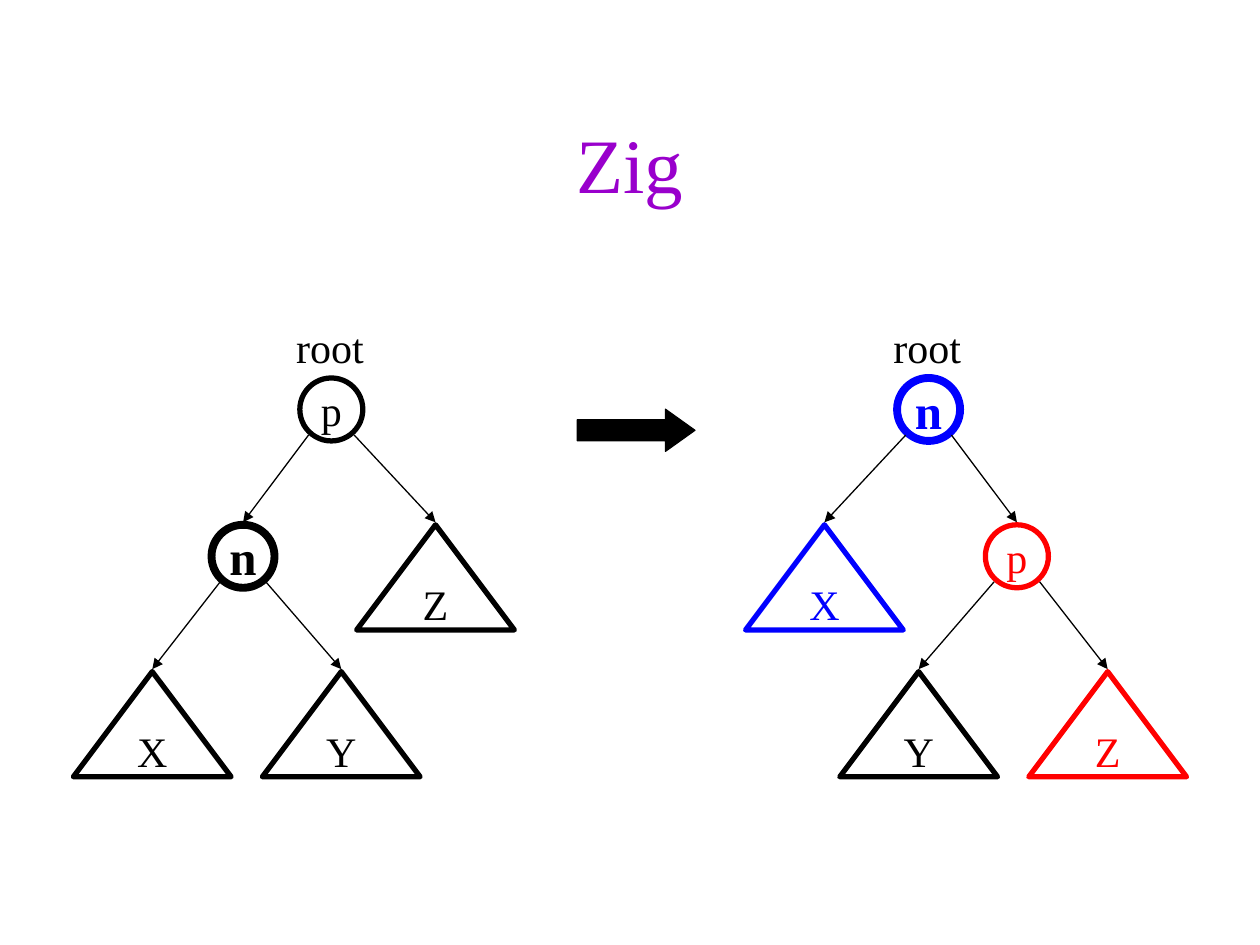
import pptx
import pptx.dml.color
import pptx.enum.shapes
import pptx.enum.text
import pptx.oxml.ns
import pptx.util
from lxml import etree
from pptx.util import Cm, Pt

FONT = "Times New Roman"
COLOURS = {"ink": "000000", "title": "9900CC", "promoted": "0000FF", "demoted": "FF0000"}
SHAPES = pptx.enum.shapes.MSO_SHAPE
CENTRE = pptx.enum.text.PP_ALIGN.CENTER
MIDDLE = pptx.enum.text.MSO_ANCHOR.MIDDLE

SLIDE_WIDTH, SLIDE_HEIGHT = 25.4, 19.05
TREE_WIDTH, TREE_LEFT, TREE_TOP = 8.89, 1.48, 6.35
LEVEL_TOP, LEVEL_STEP = 1.27, 2.96
NODE_SIZE = 1.27
SUBTREE_WIDTH, SUBTREE_HEIGHT = 3.18, 2.12
ROOT_X, CHILD_X, SIBLING_X, OUTER_X, INNER_X = 5.2, 3.42, 7.3, 1.59, 5.4


def rgb(colour):
    """Return the named colour."""
    return pptx.dml.color.RGBColor.from_string(COLOURS[colour])


def write(frame, text, size, colour, bold=False, align=CENTRE):
    """Put one styled paragraph in a text frame."""
    frame.text = text
    paragraph = frame.paragraphs[0]
    paragraph.alignment = align
    paragraph.font.name = FONT
    paragraph.font.size = Pt(size)
    paragraph.font.bold = bold
    paragraph.font.color.rgb = rgb(colour)


def add_outline(slide, kind, box, text, colour, focus=False):
    """Draw an unfilled, labelled shape; the focus node is heavier."""
    shape = slide.shapes.add_shape(kind, *map(Cm, box))
    shape.shadow.inherit = False
    shape.fill.background()
    shape.line.color.rgb = rgb(colour)
    shape.line.width = Pt(4.5 if focus else 3)
    shape.text_frame.word_wrap = False
    shape.text_frame.vertical_anchor = MIDDLE
    write(shape.text_frame, text, 28 if focus else 24, colour, focus)


def add_branch(slide, start, end):
    """Draw a thin arrow from a parent to a child."""
    branch = slide.shapes.add_connector(
        pptx.enum.shapes.MSO_CONNECTOR.STRAIGHT, *map(Cm, (*start, *end)))
    branch.line.color.rgb = rgb("ink")
    branch.line.width = Pt(0.75)
    qn = pptx.oxml.ns.qn
    etree.SubElement(branch.line._get_or_add_ln(), qn("a:tailEnd"), type="triangle")
    etree.SubElement(branch._element.spPr, qn("a:effectLst"))


def add_tree(slide, left, top, mirrored, nodes, subtrees):
    """Draw a tree in its box from (text, colour) pairs, mirrored if asked."""
    def across(x):
        return left + (TREE_WIDTH - x if mirrored else x)

    def down(level):
        return top + LEVEL_TOP + level * LEVEL_STEP

    for (text, colour), x, level in zip(nodes, (ROOT_X, CHILD_X), (0, 1)):
        box = across(x) - NODE_SIZE / 2, down(level), NODE_SIZE, NODE_SIZE
        add_outline(slide, SHAPES.OVAL, box, text, colour, text == "n")

    for (text, colour), x, level in zip(subtrees, (OUTER_X, INNER_X, SIBLING_X), (2, 2, 1)):
        box = across(x) - SUBTREE_WIDTH / 2, down(level), SUBTREE_WIDTH, SUBTREE_HEIGHT
        add_outline(slide, SHAPES.ISOSCELES_TRIANGLE, box, text, colour)

    families = ((ROOT_X, (CHILD_X, SIBLING_X)), (CHILD_X, (OUTER_X, INNER_X)))
    for level, (parent, children) in enumerate(families):
        for side, child in zip((-0.46, 0.46), children):
            add_branch(slide, (across(parent + side), down(level) + 1.15),
                       (across(child), down(level + 1) - 0.05))

    label = slide.shapes.add_textbox(
        Cm(across(ROOT_X) - 0.96), Cm(top), Cm(1.88), Cm(1.27))
    label.text_frame.word_wrap = False
    write(label.text_frame, "root", 24, "ink", align=pptx.enum.text.PP_ALIGN.LEFT)


def add_title(slide, left, top, width, height):
    """Place and format the slide title."""
    title = slide.shapes.title
    title.left, title.top, title.width, title.height = map(Cm, (left, top, width, height))
    title.text_frame.auto_size = pptx.enum.text.MSO_AUTO_SIZE.NONE
    title.text_frame.vertical_anchor = MIDDLE
    write(title.text_frame, "Zig", 44, "title")


def add_rotation_arrow(slide, left, top, width, height):
    """Draw the solid arrow between the two trees."""
    arrow = slide.shapes.add_shape(
        SHAPES.RIGHT_ARROW, *map(Cm, (left, top, width, height)))
    arrow.shadow.inherit = False
    arrow.adjustments[1] = 0.7
    arrow.fill.solid()
    arrow.fill.fore_color.rgb = rgb("ink")
    arrow.line.color.rgb = rgb("ink")
    arrow.line.width = Pt(0.75)


def main():
    """Build and save the slide."""
    deck = pptx.Presentation()
    deck.slide_width, deck.slide_height = Cm(SLIDE_WIDTH), Cm(SLIDE_HEIGHT)
    slide = deck.slides.add_slide(deck.slide_layouts.get_by_name("Title Only"))
    add_title(slide, 1.9, 1.7, 21.6, 3.17)
    add_tree(slide, TREE_LEFT, TREE_TOP, False,
             [("p", "ink"), ("n", "ink")],
             [("X", "ink"), ("Y", "ink"), ("Z", "ink")])
    add_rotation_arrow(slide, 11.64, 8.25, 2.37, 0.85)
    add_tree(slide, SLIDE_WIDTH - TREE_LEFT - TREE_WIDTH, TREE_TOP, True,
             [("n", "promoted"), ("p", "demoted")],
             [("Z", "demoted"), ("Y", "ink"), ("X", "promoted")])
    deck.save("out.pptx")


if __name__ == "__main__":
    main()
